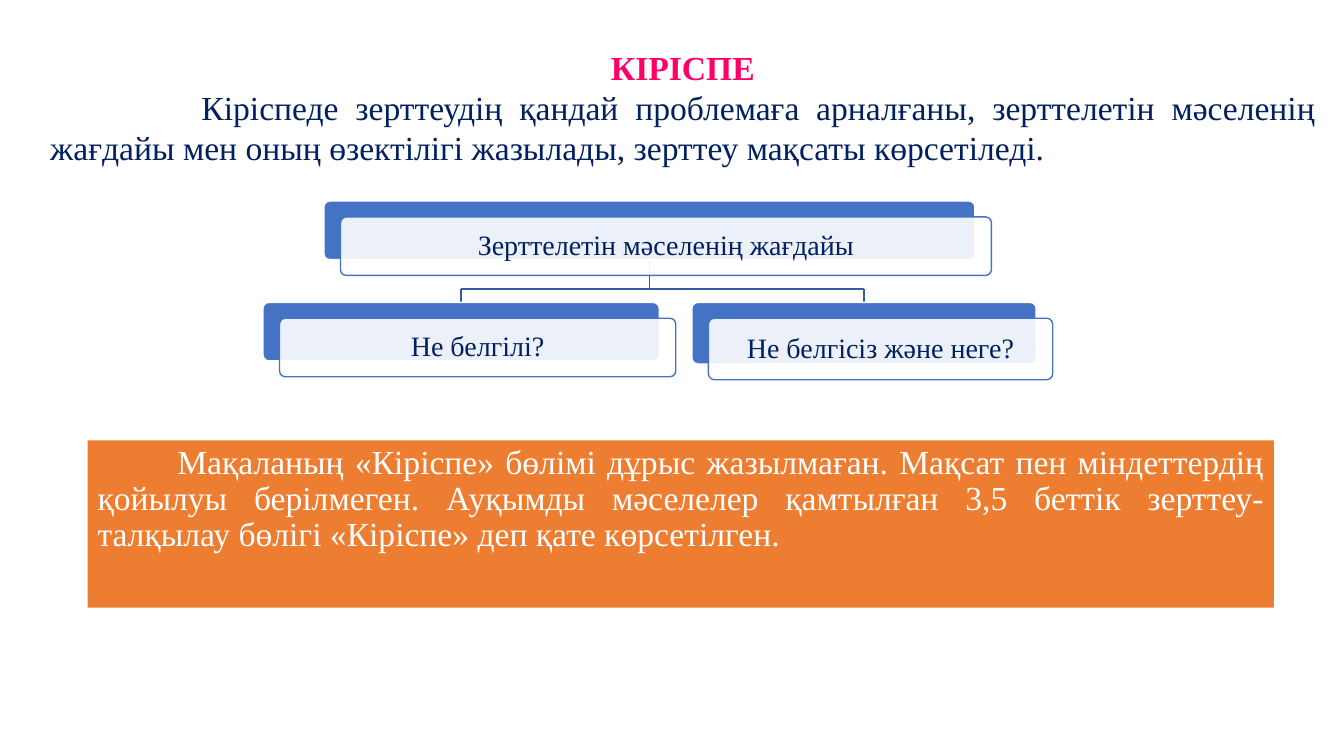
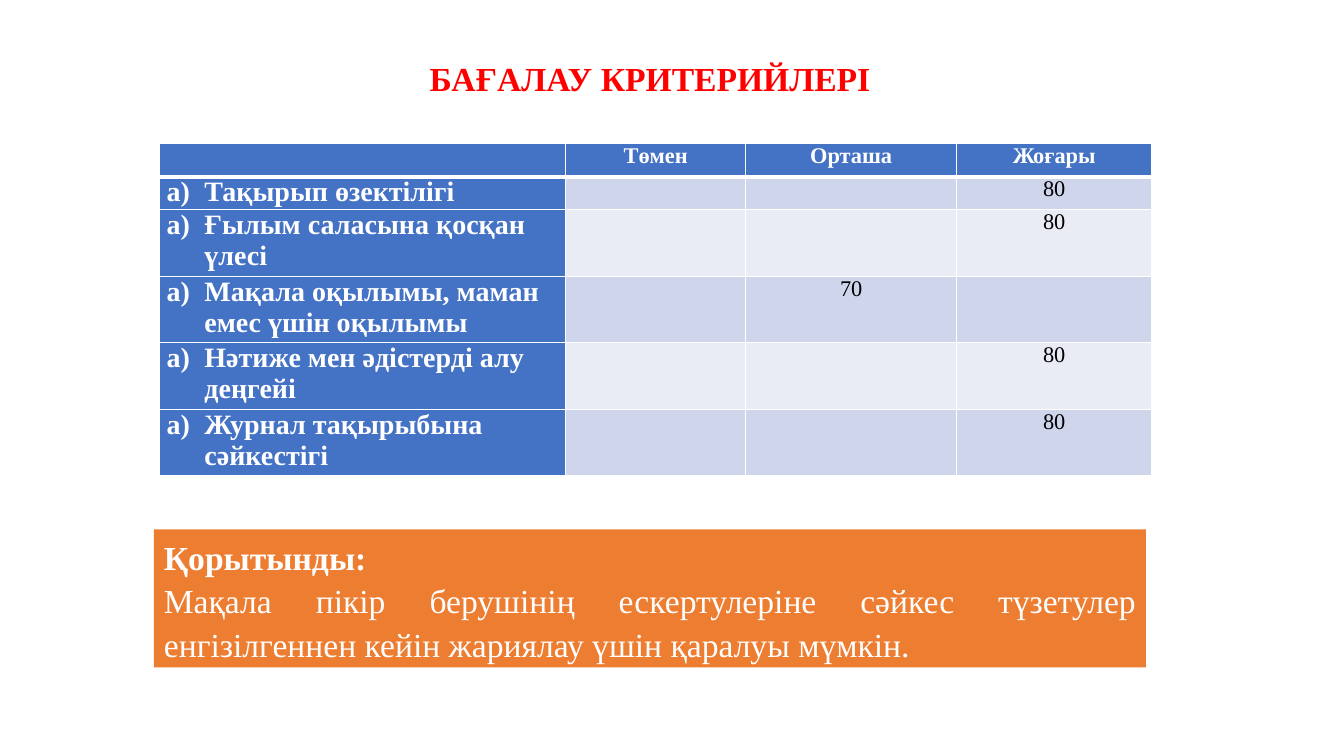
import pptx
import pptx.util
import pptx.dml.color
import pptx.enum.shapes
import pptx.enum.text
import pptx.oxml
import pptx.oxml.ns
import lxml.etree

Pt = pptx.util.Pt
RGBColor = pptx.dml.color.RGBColor
ALIGN = pptx.enum.text.PP_ALIGN
ANCHOR = pptx.enum.text.MSO_ANCHOR
SHAPE = pptx.enum.shapes.MSO_SHAPE
qn = pptx.oxml.ns.qn

WHITE = RGBColor(0xFF, 0xFF, 0xFF)
BLACK = RGBColor(0, 0, 0)
PINK = RGBColor(0xFF, 0x00, 0x66)
RED = RGBColor(0xFF, 0, 0)
NAVY = RGBColor(0x00, 0x20, 0x60)
BLUE = RGBColor(0x44, 0x72, 0xC4)
DARK_BLUE = RGBColor(0x36, 0x5B, 0x9D)
ORANGE = RGBColor(0xED, 0x7D, 0x31)
BAND_DARK = RGBColor(0xCF, 0xD5, 0xEA)
BAND_LIGHT = RGBColor(0xE9, 0xEB, 0xF5)


class Deck:
    """The shared style and the slide being filled; boxes are (left, top, width, height)."""

    FONT = "Times New Roman"
    CARD_SHIFT = (11.8, 11.3)

    def __init__(self):
        self.prs = pptx.Presentation()
        self.prs.slide_width = Pt(960)
        self.prs.slide_height = Pt(540)
        self.slide = None

    def format(self, p, size, color, bold=False, align=None, spacing=None):
        p.font.name = self.FONT
        p.font.size = Pt(size)
        p.font.bold = bold
        p.font.color.rgb = color
        p.alignment = align
        p.line_spacing = spacing

    def add_slide(self, title, box, color):
        self.slide = self.prs.slides.add_slide(self.prs.slide_layouts[5])
        sp = self.slide.shapes.title
        sp.left, sp.top, sp.width, sp.height = map(Pt, box)
        tf = sp.text_frame
        tf.text = title
        tf.auto_size = pptx.enum.text.MSO_AUTO_SIZE.NONE
        tf.vertical_anchor = ANCHOR.MIDDLE
        self.format(tf.paragraphs[0], 24, color, True, ALIGN.CENTER)

    def justified(self, sp, texts, color, spacing=None, indent=0, bold_first=False):
        tf = sp.text_frame
        tf.word_wrap = True
        tf.vertical_anchor = ANCHOR.TOP
        tf.text = "\n".join(texts)
        for i, p in enumerate(tf.paragraphs):
            self.format(p, 24, color, bold_first and i == 0, ALIGN.JUSTIFY, spacing)
            p._p.get_or_add_pPr().set("indent", str(Pt(indent)))

    def text(self, box, text, color, indent):
        sp = self.slide.shapes.add_textbox(*map(Pt, box))
        self.justified(sp, [text], color, indent=indent)

    def shape(self, kind, box, fill, line=None):
        sp = self.slide.shapes.add_shape(kind, *map(Pt, box))
        sp.shadow.inherit = False
        sp.fill.solid()
        sp.fill.fore_color.rgb = fill
        if line is None:
            sp.line.fill.background()
        else:
            sp.line.color.rgb = line
            sp.line.width = Pt(1)
        return sp

    def note(self, box, texts, **style):
        self.justified(self.shape(SHAPE.RECTANGLE, box, ORANGE), texts, WHITE, **style)

    def card(self, box, text):
        """A blue plate with a translucent white label shifted over it."""
        left, top, width, height = box
        dx, dy = self.CARD_SHIFT
        back = self.shape(SHAPE.ROUNDED_RECTANGLE, box, BLUE, WHITE)
        front = self.shape(SHAPE.ROUNDED_RECTANGLE, (left + dx, top + dy, width, height),
                           WHITE, BLUE)
        for sp in (back, front):
            sp.adjustments[0] = 0.1
        clr = front._element.spPr.find(qn("a:solidFill"))[0]
        lxml.etree.SubElement(clr, qn("a:alpha")).set("val", "90000")
        tf = front.text_frame
        tf.word_wrap = True
        tf.vertical_anchor = ANCHOR.MIDDLE
        tf.text = text
        self.format(tf.paragraphs[0], 20, NAVY, align=ALIGN.CENTER, spacing=0.9)

    def line(self, x1, y1, x2, y2):
        cxn = self.slide.shapes.add_connector(
            pptx.enum.shapes.MSO_CONNECTOR.STRAIGHT, *map(Pt, (x1, y1, x2, y2)))
        cxn.line.color.rgb = DARK_BLUE
        cxn.line.width = Pt(1)
        lxml.etree.SubElement(cxn._element.spPr, qn("a:effectLst"))

    def tree(self, root, children):
        """Draw a root card over its child cards, each given as (box, text)."""
        left, top, width, height = root[0]
        root_x, root_y = left + width / 2, top + height
        child_y = children[0][0][1]
        bus_y = root_y + 0.69 * (child_y - root_y)
        child_xs = [box[0] + box[2] / 2 for box, _ in children]
        self.line(root_x, root_y, root_x, bus_y)
        self.line(child_xs[0], bus_y, child_xs[-1], bus_y)
        for x in child_xs:
            self.line(x, bus_y, x, child_y)
        for box, text in [root, *children]:
            self.card(box, text)

    def cell_borders(self, cell, bottom):
        tcPr = cell._tc.get_or_add_tcPr()
        for i, side in enumerate("LRTB"):
            width = Pt(bottom if side == "B" else 1)
            tcPr.insert(i, pptx.oxml.parse_xml(
                f'<a:ln{side} {pptx.oxml.ns.nsdecls("a")} w="{width}"><a:solidFill>'
                f'<a:srgbClr val="{WHITE}"/></a:solidFill></a:ln{side}>'))

    def letter_bullet(self, p):
        pPr = p._p.get_or_add_pPr()
        pPr.set("marL", str(Pt(27)))
        pPr.set("indent", str(Pt(-27)))
        bullet = pptx.oxml.parse_xml(
            f'<a:buAutoNum {pptx.oxml.ns.nsdecls("a")} type="alphaLcParenR"/>')
        pPr.insert_element_before(bullet, "a:tabLst", "a:defRPr", "a:extLst")

    def table(self, left, top, widths, heights, rows):
        table = self.slide.shapes.add_table(
            len(rows), len(widths), Pt(left), Pt(top), Pt(sum(widths)), Pt(sum(heights))).table
        for column, width in zip(table.columns, widths):
            column.width = Pt(width)
        for row, height in zip(table.rows, heights):
            row.height = Pt(height)
        for i, row in enumerate(rows):
            for j, text in enumerate(row):
                cell = table.cell(i, j)
                cell.margin_left = cell.margin_right = Pt(5)
                cell.margin_top = cell.margin_bottom = 0
                heading = i == 0 or j == 0
                cell.fill.solid()
                cell.fill.fore_color.rgb = (
                    BLUE if heading else BAND_DARK if i % 2 else BAND_LIGHT)
                self.cell_borders(cell, 3 if i == 0 else 1)
                cell.text = text
                p = cell.text_frame.paragraphs[0]
                criterion = j == 0 and i > 0
                self.format(p, 20 if criterion else 16, WHITE if heading else BLACK,
                            heading, ALIGN.LEFT if criterion else ALIGN.CENTER)
                if criterion:
                    self.letter_bullet(p)


def introduction(deck):
    deck.add_slide("КІРІСПЕ", (28.8, 30, 918, 36), PINK)
    deck.text((28.8, 58.5, 918, 65),
              "Кіріспеде зерттеудің қандай проблемаға арналғаны, зерттелетін мәселенің "
              "жағдайы мен оның өзектілігі жазылады, зерттеу мақсаты көрсетіледі.",
              NAVY, indent=108)
    deck.note((62.6, 314.6, 847.4, 119.5),
              ["Мақаланың «Кіріспе» бөлімі дұрыс жазылмаған. Мақсат пен міндеттердің "
               "қойылуы берілмеген. Ауқымды мәселелер қамтылған 3,5 беттік "
               "зерттеу-талқылау бөлігі «Кіріспе» деп қате көрсетілген."],
              spacing=0.9, indent=57)
    deck.tree(((231.4, 143.6, 465, 41.8), "Зерттелетін мәселенің жағдайы"),
              [((187.9, 216, 283, 41.8), "Не белгілі?"),
               ((494.2, 216, 246, 44), "Не белгісіз және неге?")])


def criteria(deck):
    deck.add_slide("БАҒАЛАУ КРИТЕРИЙЛЕРІ", (273.6, 37.5, 381.6, 36), RED)
    deck.table(114, 102.4, (290, 128.8, 150.5, 139.5), (24, 23.5) + (47.5,) * 4, [
        ("", "Төмен", "Орташа", "Жоғары"),
        ("Тақырып өзектілігі", "", "", "80"),
        ("Ғылым саласына қосқан үлесі", "", "", "80"),
        ("Мақала оқылымы, маман емес үшін оқылымы", "", "70", ""),
        ("Нәтиже мен әдістерді алу деңгейі", "", "", "80"),
        ("Журнал тақырыбына сәйкестігі", "", "", "80"),
    ])
    deck.note((110, 378.2, 708.6, 98.6),
              ["Қорытынды:",
               "Мақала пікір берушінің ескертулеріне сәйкес түзетулер енгізілгеннен "
               "кейін жариялау үшін қаралуы мүмкін."],
              spacing=1.07, bold_first=True)


def main():
    deck = Deck()
    introduction(deck)
    criteria(deck)
    deck.prs.save("out.pptx")


if __name__ == "__main__":
    main()
